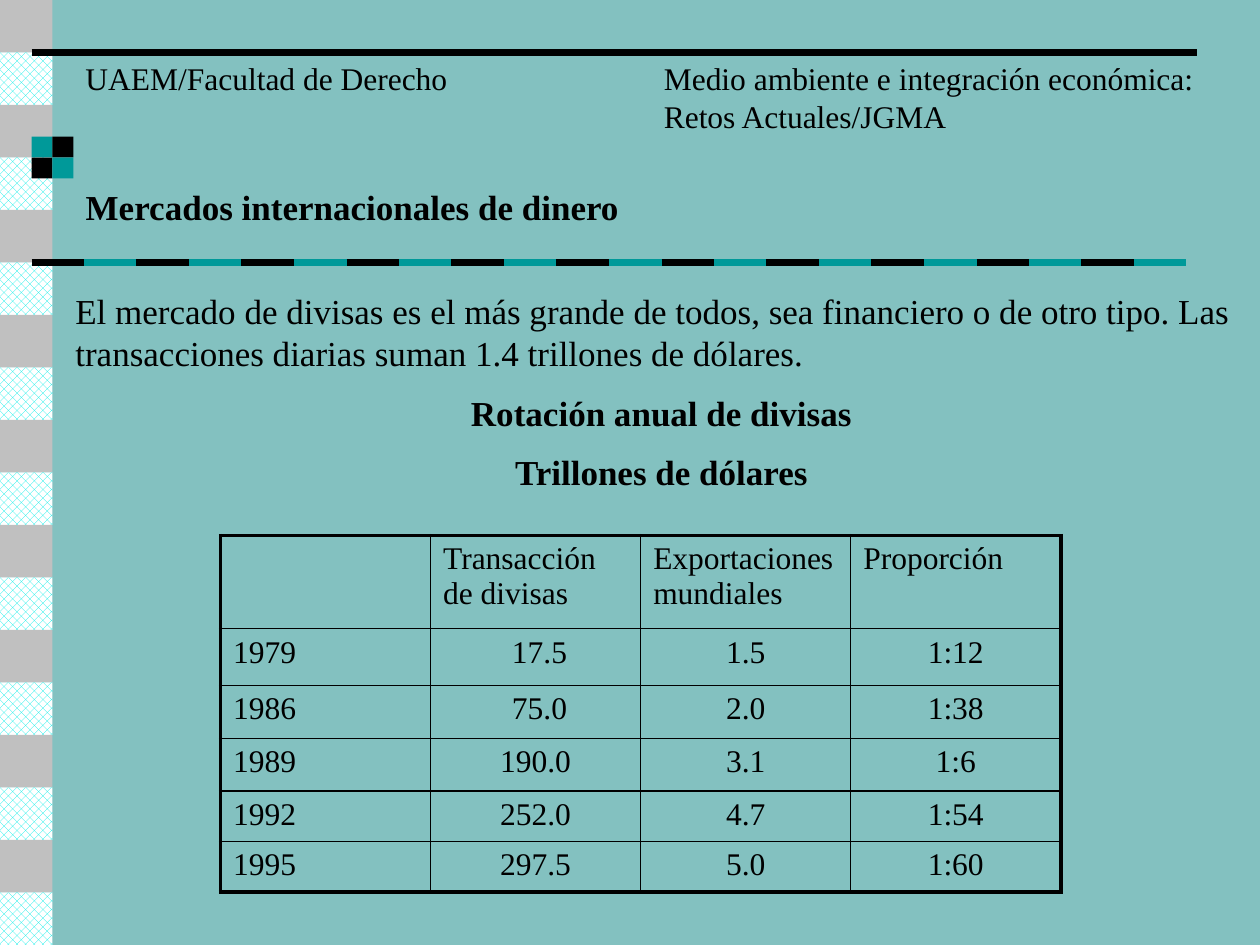
"""Build the slide on international money markets."""
import dataclasses
import typing

import lxml.etree
import pptx
import pptx.dml.color
import pptx.enum.dml
import pptx.enum.shapes
import pptx.enum.text
import pptx.oxml.ns
import pptx.util

Inches = pptx.util.Inches
Pt = pptx.util.Pt
Rgb = pptx.dml.color.RGBColor
Align = pptx.enum.text.PP_ALIGN
Fit = pptx.enum.text.MSO_AUTO_SIZE
qn = pptx.oxml.ns.qn


@dataclasses.dataclass(frozen=True)
class Theme:
    back: str = "83C1C0"
    ink: str = "000000"
    teal: str = "009999"
    gray: str = "C0C0C0"
    aqua: str = "00EEE8"
    white: str = "FFFFFF"
    font: str = "Times New Roman"
    large: float = 20
    small: float = 18
    rule: float = 4.5
    frame: float = 2.25
    grid: float = 1


@dataclasses.dataclass(frozen=True)
class Box:
    left: float
    top: float
    width: float
    height: float

    def emu(self) -> tuple:
        return tuple(Inches(n) for n in dataclasses.astuple(self))


@dataclasses.dataclass(frozen=True)
class Line:
    text: str
    size: float
    bold: bool = False
    align: typing.Any = Align.LEFT
    gap: float = 0


THEME = Theme()
STEP = 5 / 12
EDGE = 0.25
HEADS = [
    (Box(0.58, 0.42, 3.11, 0.4), ["UAEM/Facultad de Derecho"]),
    (Box(5.17, 0.42, 4.51, 0.71),
     ["Medio ambiente e integración económica:", "Retos Actuales/JGMA"]),
]
TITLE = Line("Mercados internacionales de dinero", THEME.large, True)
BODY = [
    Line("El mercado de divisas es el más grande de todos, sea financiero o de otro tipo. "
         "Las transacciones diarias suman 1.4 trillones de dólares.", THEME.large),
    Line("Rotación anual de divisas", THEME.large, True, Align.CENTER, 10),
    Line("Trillones de dólares", THEME.large, True, Align.CENTER, 10),
]
ROWS = [
    ("", "Transacción de divisas", "Exportaciones mundiales", "Proporción"),
    ("1979", " 17.5", "1.5", "1:12"),
    ("1986", " 75.0", "2.0", "1:38"),
    ("1989", "190.0", "3.1", "1:6"),
    ("1992", "252.0", "4.7", "1:54"),
    ("1995", "297.5", "5.0", "1:60"),
]
HEIGHTS = [0.74, 0.45, 0.42, 0.42, 0.4, 0.4]


def color(code: str) -> Rgb:
    return Rgb.from_string(code)


def write(frame, lines: list[Line]) -> None:
    for k, line in enumerate(lines):
        para = frame.add_paragraph() if k else frame.paragraphs[0]
        para.alignment = line.align
        para.space_before = Pt(line.gap)
        run = para.add_run()
        run.text = line.text
        run.font.name = THEME.font
        run.font.size = Pt(line.size)
        run.font.bold = line.bold
        run.font.color.rgb = color(THEME.ink)


def add_text(slide, box: Box, lines: list[Line], wrap: bool) -> None:
    frame = slide.shapes.add_textbox(*box.emu()).text_frame
    frame.word_wrap = wrap
    frame.auto_size = Fit.NONE if wrap else Fit.SHAPE_TO_FIT_TEXT
    write(frame, lines)


def add_tile(slide, box: Box, fill: str, mesh: bool = False) -> None:
    tile = slide.shapes.add_shape(pptx.enum.shapes.MSO_SHAPE.RECTANGLE, *box.emu())
    tile.shadow.inherit = False
    tile.line.fill.background()
    if mesh:
        tile.fill.patterned()
        tile.fill.pattern = pptx.enum.dml.MSO_PATTERN.PERCENT_50
        tile.fill.fore_color.rgb = color(fill)
        tile.fill.back_color.rgb = color(THEME.white)
    else:
        tile.fill.solid()
        tile.fill.fore_color.rgb = color(fill)


def add_rule(slide, start: float, end: float, top: float, ink: str) -> None:
    rule = slide.shapes.add_connector(
        pptx.enum.shapes.MSO_CONNECTOR.STRAIGHT,
        Inches(start), Inches(top), Inches(end), Inches(top))
    rule.line.color.rgb = color(ink)
    rule.line.width = Pt(THEME.rule)
    lxml.etree.SubElement(rule._element.spPr, qn("a:effectLst"))


def add_trim(slide) -> None:
    for k in range(18):
        mesh = k % 2 == 1
        add_tile(slide, Box(0, k * STEP, STEP, STEP),
                 THEME.aqua if mesh else THEME.gray, mesh)
    add_rule(slide, EDGE, 9.5, STEP, THEME.ink)
    side = STEP - EDGE
    for row in range(2):
        for col in range(2):
            add_tile(slide, Box(EDGE + col * side, 3 * STEP - side + row * side, side, side),
                     THEME.teal if row == col else THEME.ink)
    for k in range(22):
        start = EDGE + k * STEP
        add_rule(slide, start, start + STEP, 5 * STEP, THEME.teal if k % 2 else THEME.ink)


def set_edge(cell, widths: dict[str, float]) -> None:
    props = cell._tc.get_or_add_tcPr()
    for k, (side, width) in enumerate(widths.items()):
        edge = lxml.etree.Element(qn(f"a:ln{side}"), w=str(Pt(width)))
        fill = lxml.etree.SubElement(edge, qn("a:solidFill"))
        lxml.etree.SubElement(fill, qn("a:srgbClr"), val=THEME.ink)
        props.insert(k, edge)


def add_grid(slide, box: Box) -> None:
    count = len(ROWS[0])
    table = slide.shapes.add_table(len(ROWS), count, *box.emu()).table
    table.first_row = False
    table.horz_banding = False
    for col in table.columns:
        col.width = Inches(box.width / count)
    for r, (row, height) in enumerate(zip(ROWS, HEIGHTS)):
        table.rows[r].height = Inches(height)
        for c, text in enumerate(row):
            cell = table.cell(r, c)
            cell.fill.background()
            outer = {"L": c == 0, "R": c == count - 1, "T": r == 0, "B": r == len(ROWS) - 1}
            set_edge(cell, {side: THEME.frame if out else THEME.grid
                            for side, out in outer.items()})
            if text:
                align = Align.CENTER if r and c else Align.LEFT
                write(cell.text_frame, [Line(text, THEME.small, align=align)])


def add_title(slide, box: Box) -> None:
    title = slide.shapes.title
    title.left, title.top, title.width, title.height = box.emu()
    frame = title.text_frame
    frame.word_wrap = True
    frame.auto_size = Fit.NONE
    frame.vertical_anchor = pptx.enum.text.MSO_ANCHOR.TOP
    write(frame, [TITLE])


def main() -> None:
    deck = pptx.Presentation()
    deck.slide_width, deck.slide_height = Inches(10), Inches(7.5)
    slide = deck.slides.add_slide(deck.slide_layouts[5])
    slide.background.fill.solid()
    slide.background.fill.fore_color.rgb = color(THEME.back)
    add_trim(slide)
    add_title(slide, Box(0.58, 1.42, 6.83, 0.43))
    add_text(slide, Box(0.5, 2.25, 9.5, 2.77), BODY, True)
    add_grid(slide, Box(1.75, 4.25, 6.67, sum(HEIGHTS)))
    for box, texts in HEADS:
        add_text(slide, box, [Line(text, THEME.small) for text in texts], False)
    deck.save("out.pptx")


if __name__ == "__main__":
    main()
